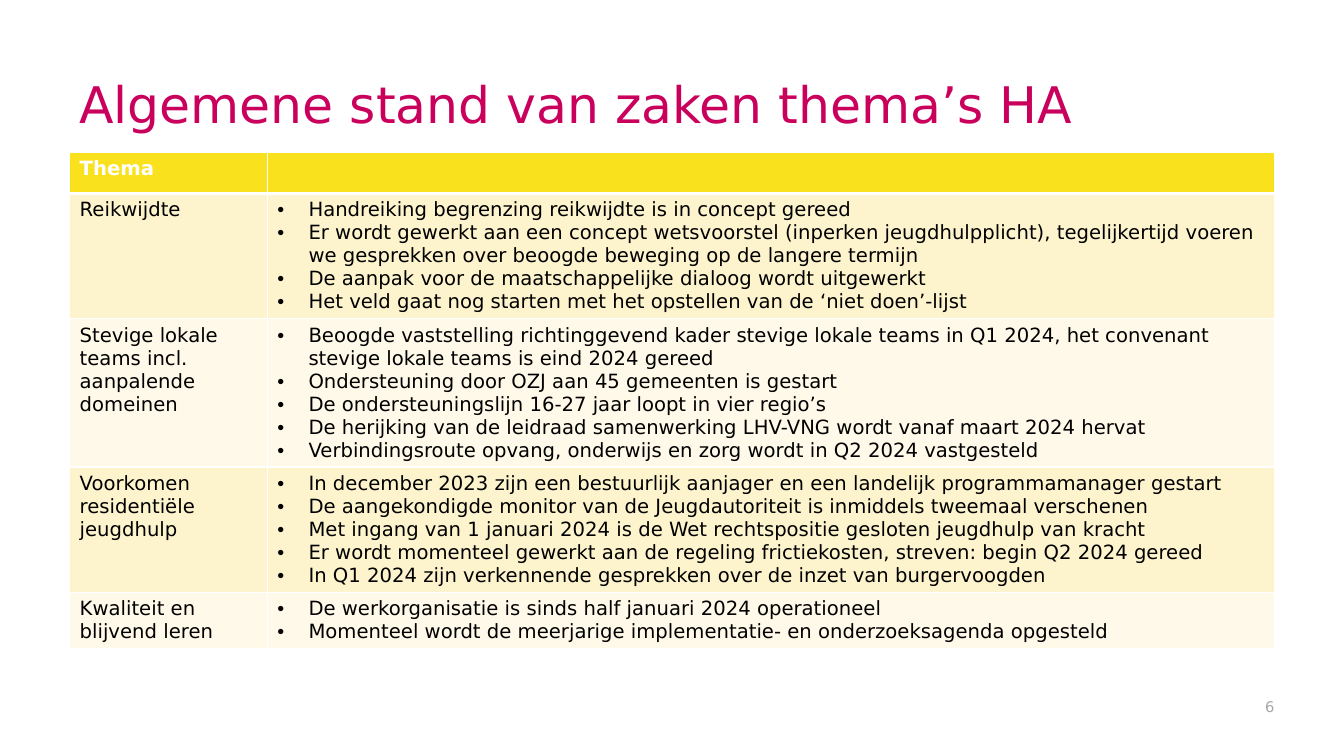
from pptx import Presentation
from pptx.dml.color import RGBColor
from pptx.enum.text import MSO_ANCHOR, PP_ALIGN
from pptx.oxml import parse_xml
from pptx.oxml.ns import nsdecls
from pptx.util import Inches, Pt

WHITE = RGBColor(0xFF, 0xFF, 0xFF)
BLACK = RGBColor(0x00, 0x00, 0x00)
GREY = RGBColor(0xA6, 0xA6, 0xA6)
MAGENTA = RGBColor(0xCA, 0x00, 0x5D)
YELLOW = RGBColor(0xF9, 0xE1, 0x1E)
BANDS = (RGBColor(0xFD, 0xF4, 0xCD), RGBColor(0xFE, 0xF9, 0xE8))

# Shares of the slide, in percent
MARGIN, CONTENT_WIDTH = 5.18, 89.65
THEME_WIDTH = 14.7
ROW_HEIGHT = 5.47

THEMES = [
    ("Reikwijdte", [
        "Handreiking begrenzing reikwijdte is in concept gereed",
        "Er wordt gewerkt aan een concept wetsvoorstel (inperken jeugdhulpplicht), "
        "tegelijkertijd voeren we gesprekken over beoogde beweging op de langere termijn",
        "De aanpak voor de maatschappelijke dialoog wordt uitgewerkt",
        "Het veld gaat nog starten met het opstellen van de ‘niet doen’-lijst",
    ]),
    ("Stevige lokale teams incl. aanpalende domeinen", [
        "Beoogde vaststelling richtinggevend kader stevige lokale teams in Q1 2024, "
        "het convenant stevige lokale teams is eind 2024 gereed",
        "Ondersteuning door OZJ aan 45 gemeenten is gestart",
        "De ondersteuningslijn 16-27 jaar loopt in vier regio’s",
        "De herijking van de leidraad samenwerking LHV-VNG wordt vanaf maart 2024 hervat",
        "Verbindingsroute opvang, onderwijs en zorg wordt in Q2 2024 vastgesteld",
    ]),
    ("Voorkomen residentiële jeugdhulp", [
        "In december 2023 zijn een bestuurlijk aanjager en een landelijk programmamanager gestart",
        "De aangekondigde monitor van de Jeugdautoriteit is inmiddels tweemaal verschenen",
        "Met ingang van 1 januari 2024 is de Wet rechtspositie gesloten jeugdhulp van kracht",
        "Er wordt momenteel gewerkt aan de regeling frictiekosten, streven: begin Q2 2024 gereed",
        "In Q1 2024 zijn verkennende gesprekken over de inzet van burgervoogden",
    ]),
    ("Kwaliteit en blijvend leren", [
        "De werkorganisatie is sinds half januari 2024 operationeel",
        "Momenteel wordt de meerjarige implementatie- en onderzoeksagenda opgesteld",
    ]),
]


class StatusSlide:
    font_name = "DejaVu Sans"
    body_size = 14
    bullet_indent = Inches(0.31)

    def __init__(self, presentation):
        self.width = presentation.slide_width
        self.height = presentation.slide_height
        self.slide = presentation.slides.add_slide(presentation.slide_layouts[6])

    def across(self, percent):
        return round(self.width * percent / 100)

    def down(self, percent):
        return round(self.height * percent / 100)

    def style(self, paragraph, size, color, bold=False):
        font = paragraph.font
        font.name, font.size, font.bold = self.font_name, Pt(size), bold
        font.color.rgb = color

    def text(self, words, left, top, width, height, size, color, align=PP_ALIGN.LEFT):
        box = self.slide.shapes.add_textbox(
            self.across(left), self.down(top), self.across(width), self.down(height))
        frame = box.text_frame
        frame.word_wrap = True
        frame.vertical_anchor = MSO_ANCHOR.BOTTOM
        paragraph = frame.paragraphs[0]
        paragraph.text = words
        paragraph.alignment = align
        self.style(paragraph, size, color)
        return frame

    def table(self, left, top, column_widths, row_count):
        table = self.slide.shapes.add_table(
            row_count, len(column_widths), self.across(left), self.down(top),
            self.across(sum(column_widths)), self.down(ROW_HEIGHT * row_count)).table
        table.horz_banding = False
        for column, width in zip(table.columns, column_widths):
            column.width = self.across(width)
        for row in table.rows:
            row.height = self.down(ROW_HEIGHT)
        return table

    def cell(self, cell, lines, fill, color=BLACK, bold=False, bullets=False, bottom=1):
        self.borders(cell, bottom)
        cell.fill.solid()
        cell.fill.fore_color.rgb = fill
        cell.text = "\n".join(lines)
        for paragraph in cell.text_frame.paragraphs:
            if bullets:
                self.bullet(paragraph)
            self.style(paragraph, self.body_size, color, bold)

    def borders(self, cell, bottom):
        properties = cell._tc.get_or_add_tcPr()
        for side, points in (("L", 1), ("R", 1), ("T", 1), ("B", bottom)):
            properties.append(parse_xml(
                f'<a:ln{side} {nsdecls("a")} w="{Pt(points)}"><a:solidFill>'
                f'<a:srgbClr val="{WHITE}"/></a:solidFill></a:ln{side}>'))

    def bullet(self, paragraph):
        properties = paragraph._p.get_or_add_pPr()
        properties.set("marL", str(self.bullet_indent))
        properties.set("indent", str(-self.bullet_indent))
        properties.append(parse_xml(f'<a:buFont {nsdecls("a")} typeface="Arial"/>'))
        properties.append(parse_xml(f'<a:buChar {nsdecls("a")} char="•"/>'))


def main():
    presentation = Presentation()
    presentation.slide_width, presentation.slide_height = Inches(13.33), Inches(7.5)
    page = StatusSlide(presentation)

    # Theme table: header, then one row per theme
    overview = page.table(MARGIN, 20.13, (THEME_WIDTH, CONTENT_WIDTH - THEME_WIDTH),
                          len(THEMES) + 1)
    for column, heading in enumerate(("Thema", "")):
        page.cell(overview.cell(0, column), [heading], YELLOW, WHITE, bold=True, bottom=3)
    for row, (theme, progress) in enumerate(THEMES, start=1):
        band = BANDS[(row - 1) % len(BANDS)]
        page.cell(overview.cell(row, 0), [theme], band)
        page.cell(overview.cell(row, 1), progress, band, bullets=True)

    # Page number
    page_number = page.text("6", 53.79, 90.67, 41.04, 4.67, 10.5, GREY, PP_ALIGN.RIGHT)
    page_number.margin_right = 0

    # Title
    title = page.text("Algemene stand van zaken thema’s HA",
                      MARGIN, 4.53, CONTENT_WIDTH, 13.87, 36, MAGENTA)
    title.paragraphs[0].line_spacing = 0.9

    presentation.save("out.pptx")


if __name__ == "__main__":
    main()
